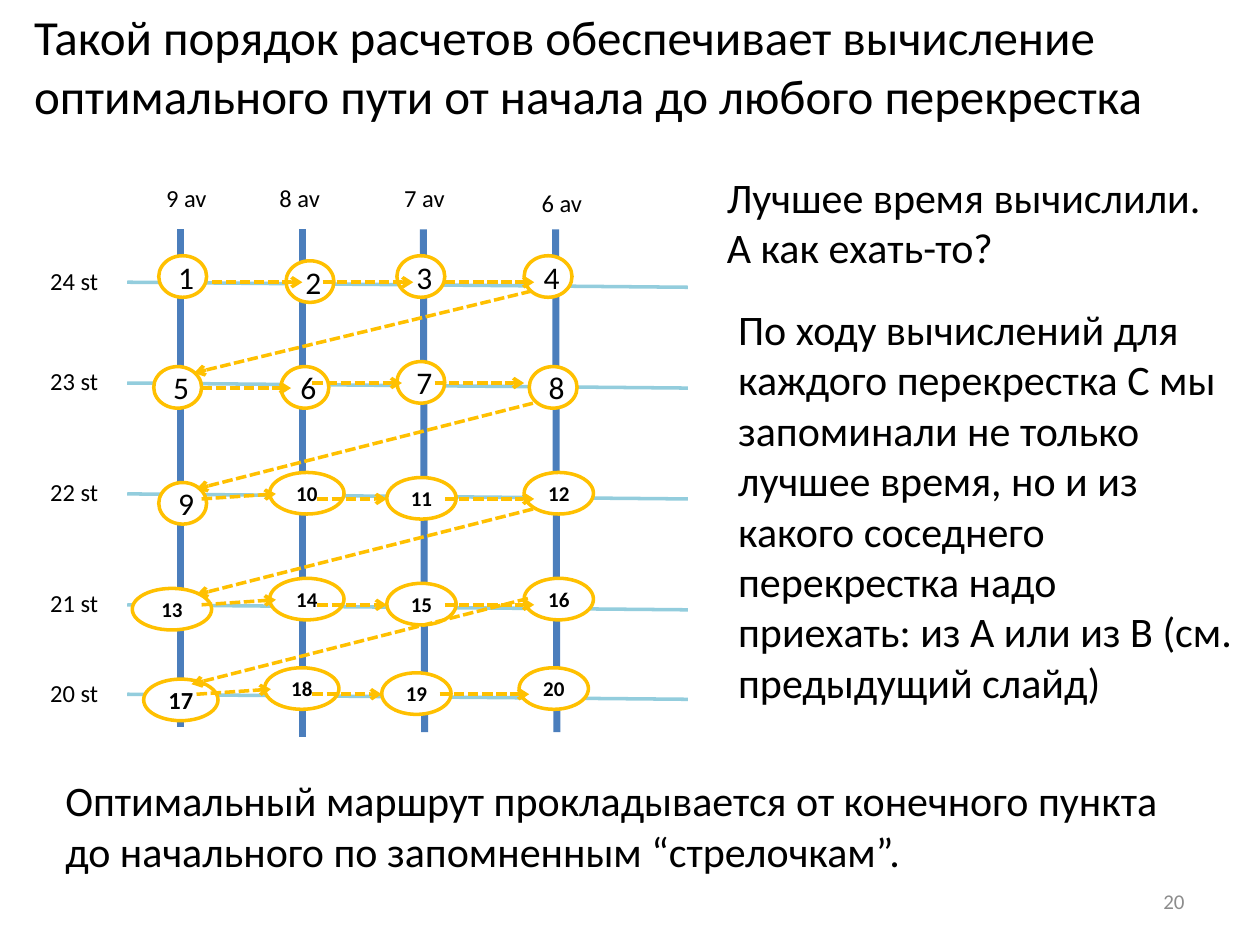
from lxml.etree import SubElement
from pptx import Presentation
from pptx.dml.color import RGBColor
from pptx.enum.dml import MSO_LINE_DASH_STYLE as DASH
from pptx.enum.shapes import MSO_CONNECTOR as CONNECTOR, MSO_SHAPE as SHAPE
from pptx.enum.text import MSO_ANCHOR as ANCHOR, MSO_AUTO_SIZE as AUTO_SIZE, PP_ALIGN as ALIGN
from pptx.oxml.ns import qn
from pptx.util import Inches, Pt

FONT = "Calibri"
BLACK, WHITE, GREY = "000000", "FFFFFF", "8C8C8C"
AVENUE_BLUE, STREET_BLUE, AMBER = "4B7EBC", "93CDDD", "FFC000"

AVENUES = [
    ("9 av", 1.22, 1.4, 1.43, 1.43, 5.77),
    ("8 av", 2.12, 1.4, 2.4, 2.4, 5.85),
    ("7 av", 3.11, 1.4, 3.36, 3.37, 5.81),
    ("6 av", 4.2, 1.44, 4.41, 4.42, 5.81),
]
STREETS = [("24 st", 2.24), ("23 st", 3.04), ("22 st", 3.92), ("21 st", 4.8), ("20 st", 5.51)]

SINGLE_DIGIT_CROSSINGS = [
    (1.26, 2.03), (2.27, 2.07), (3.15, 2.03), (4.16, 2.03),
    (1.22, 2.91), (2.23, 2.91), (3.15, 2.87), (4.2, 2.91),
    (1.26, 3.83),
]
ROW_STARTS = [(13, 1.05, 4.67, 0.63, 12), (17, 1.14, 5.39, 0.59, 14)]
ROW_CROSSINGS = [(2.14, 3.75, 0.59), (3.07, 3.79, 0.55), (4.16, 3.75, 0.55)]
LOWER_ROWS = [(10, 0, 0), (14, 0, 0.84), (18, -0.04, 1.55)]

UPPER_STEPS = [
    (1.68, 2.24, 2.4, 2.24), (2.56, 2.24, 3.28, 2.24), (3.53, 2.24, 4.24, 2.24),
    (4.22, 2.31, 1.54, 2.96),
    (1.6, 3.08, 2.31, 3.08), (2.48, 3.04, 3.19, 3.04), (3.45, 3.04, 4.16, 3.04),
]
LOWER_STEPS = [
    (4.23, 3.2, 1.56, 3.88),
    (1.6, 3.96, 2.19, 3.92), (2.52, 3.96, 3.07, 3.96), (3.53, 3.96, 4.24, 3.96),
]


def rgb(hex_color):
    return RGBColor.from_string(hex_color)


def write(frame, lines, size, color=BLACK, bold=False, align=ALIGN.LEFT):
    for index, line in enumerate(lines):
        paragraph = frame.add_paragraph() if index else frame.paragraphs[0]
        paragraph.alignment = align
        run = paragraph.add_run()
        run.text = line
        run.font.name = FONT
        run.font.size = Pt(size)
        run.font.bold = bold
        run.font.color.rgb = rgb(color)


def add_title(slide, text):
    title = slide.shapes.title
    title.left, title.top = Inches(0.17), Inches(0)
    title.width, title.height = Inches(9.66), Inches(1.04)
    title.text_frame.auto_size = AUTO_SIZE.NONE
    title.text_frame.vertical_anchor = ANCHOR.TOP
    write(title.text_frame, [text], 28)


def add_text(slide, box, lines, size, wrap=True, anchor=ANCHOR.TOP, **style):
    frame = slide.shapes.add_textbox(*map(Inches, box)).text_frame
    frame.word_wrap = wrap
    frame.vertical_anchor = anchor
    write(frame, lines, size, **style)


def add_line(slide, ends, color, width):
    line = slide.shapes.add_connector(CONNECTOR.STRAIGHT, *map(Inches, ends))
    line.line.color.rgb = rgb(color)
    line.line.width = Pt(width)
    SubElement(line._element.spPr, qn("a:effectLst"))
    return line


def add_step(slide, ends):
    step = add_line(slide, ends, AMBER, 2)
    step.line.dash_style = DASH.SQUARE_DOT
    SubElement(step.line._get_or_add_ln(), qn("a:tailEnd"), type="arrow")


def add_crossing(slide, number, left, top, width, size, bold):
    crossing = slide.shapes.add_shape(SHAPE.OVAL, *map(Inches, (left, top, width, 0.33)))
    crossing.shadow.inherit = False
    crossing.fill.solid()
    crossing.fill.fore_color.rgb = rgb(WHITE)
    crossing.line.color.rgb = rgb(AMBER)
    crossing.line.width = Pt(2)
    crossing.text_frame.vertical_anchor = ANCHOR.MIDDLE
    write(crossing.text_frame, [str(number)], size, bold=bold, align=ALIGN.CENTER)


def add_street_grid(slide):
    for name, left, top, start, end, bottom in AVENUES:
        add_line(slide, (start, 1.82, end, bottom), AVENUE_BLUE, 4)
        add_text(slide, (left, top, 0.53, 0.34), [name], 14, wrap=False)
    for name, y in STREETS:
        add_line(slide, (1.01, y, 5.46, y + 0.04), STREET_BLUE, 2)
        add_text(slide, (0.3, y - 0.18, 0.59, 0.34), [name], 14, wrap=False)


def add_crossings(slide):
    for number, (left, top) in enumerate(SINGLE_DIGIT_CROSSINGS, 1):
        add_crossing(slide, number, left, top, 0.38, 18, False)
    for number, left, top, width, size in ROW_STARTS:
        add_crossing(slide, number, left, top, width, size, True)
    for first, dx, dy in LOWER_ROWS:
        for number, (left, top, width) in enumerate(ROW_CROSSINGS, first):
            add_crossing(slide, number, left + dx, top + dy, width, 12, True)


def add_steps(slide):
    for ends in UPPER_STEPS:
        add_step(slide, ends)
    for _, dx, dy in LOWER_ROWS:
        for x1, y1, x2, y2 in LOWER_STEPS:
            add_step(slide, (x1 + dx, y1 + dy, x2 + dx, y2 + dy))


def main():
    deck = Presentation()
    deck.slide_width, deck.slide_height = Inches(10), Inches(7.5)
    slide = deck.slides.add_slide(deck.slide_layouts[5])
    add_title(slide, "Такой порядок расчетов обеспечивает вычисление "
                     "оптимального пути от начала до любого перекрестка")
    add_text(slide, (5.67, 1.31, 4.12, 0.91),
             ["Лучшее время вычислили.", "А как ехать-то?"], 24)
    add_street_grid(slide)
    add_crossings(slide)
    add_steps(slide)
    add_text(slide, (0.42, 6.1, 9.16, 0.91),
             ["Оптимальный маршрут прокладывается от конечного пункта "
              "до начального по запомненным “стрелочкам”."], 24)
    add_text(slide, (5.76, 2.36, 4.12, 3.33),
             ["По ходу вычислений для каждого перекрестка C мы запоминали "
              "не только лучшее время, но и из какого соседнего перекрестка "
              "надо приехать: из A или из B (см. предыдущий слайд)"], 24)
    add_text(slide, (7.17, 6.95, 2.33, 0.4), ["20"], 12,
             anchor=ANCHOR.MIDDLE, color=GREY, align=ALIGN.RIGHT)
    deck.save("out.pptx")


if __name__ == "__main__":
    main()
